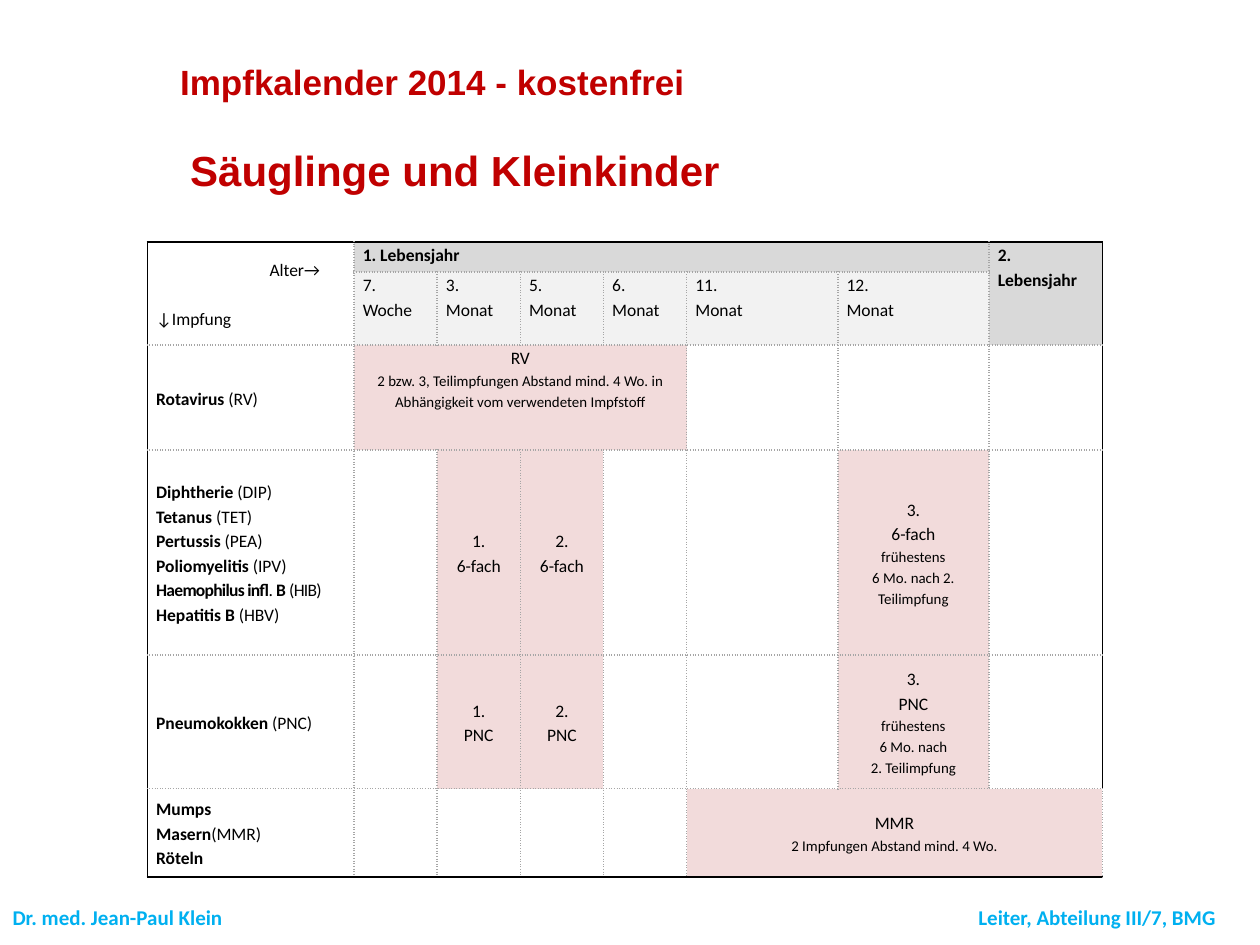
from lxml import etree
from pptx import Presentation
from pptx import util as u
from pptx.dml.color import RGBColor
from pptx.enum import text
from pptx.oxml import parse_xml
from pptx.oxml.ns import nsdecls, qn

HUES = {
    "title": "C00000", "foot": "00B0F0", "ink": "000000", "dots": "A6A6A6",
    "head": "D9D9D9", "month": "F2F2F2", "dose": "F2DBDB",
}
COLS = [1.64] + [0.66] * 4 + [1.2] * 2 + [0.9]
ROWS = [0.24, 0.58, 0.83, 1.63, 1.06, 0.7]
MONTHS = ["7. Woche", "3. Monat", "5. Monat", "6. Monat", "11. Monat", "12. Monat"]
SHOTS = [
    ["Rotavirus| (RV)"],
    ["Diphtherie| (DIP)", "Tetanus| (TET)", "Pertussis| (PEA)",
     "Poliomyelitis| (IPV)", "Haemophilus infl|. |B |(HIB)", "Hepatitis B| (HBV)"],
    ["Pneumokokken| (PNC)"],
    ["Mumps", "Masern|(MMR)", "Röteln"],
]
LEFT, MID = text.PP_ALIGN.LEFT, text.PP_ALIGN.CENTER
TOP, HALF = text.MSO_ANCHOR.TOP, text.MSO_ANCHOR.MIDDLE


def style(run, size, bold, hue="ink", face="Calibri"):
    run.font.name = face
    run.font.size = u.Pt(size)
    run.font.bold = bold
    run.font.color.rgb = RGBColor.from_string(HUES[hue])


def label(slide, words, box, size, hue, face, align=LEFT):
    shape = slide.shapes.add_textbox(*[u.Inches(n) for n in box])
    frame = shape.text_frame
    frame.word_wrap = True
    frame.vertical_anchor = HALF
    frame.margin_left = frame.margin_right = 0
    frame.text = words
    para = frame.paragraphs[0]
    para.alignment = align
    style(para.runs[0], size, True, hue, face)


def write(cell, lines, small=(), align=LEFT, anchor=HALF, bold=False):
    cell.vertical_anchor = anchor
    frame = cell.text_frame
    for at, line in enumerate([*lines, *small]):
        para = frame.paragraphs[0] if at == 0 else frame.add_paragraph()
        para.alignment = align
        para.line_spacing = 1.15
        size = 10 if at < len(lines) else 8.5
        for turn, part in enumerate(line.split("|")):
            run = para.add_run()
            run.text = part
            style(run, size, bold and turn % 2 == 0)
            if line.startswith("Haemophilus"):
                run.font._element.set("spc", "-40")


def edge(cell, sides):
    props = cell._tc.get_or_add_tcPr()
    for at, (side, outer) in enumerate(sides.items()):
        hue, dash = ("ink", "solid") if outer else ("dots", "sysDot")
        props.insert(at, parse_xml(
            f'<a:ln{side} {nsdecls("a")} w="12700"><a:solidFill>'
            f'<a:srgbClr val="{HUES[hue]}"/></a:solidFill>'
            f'<a:prstDash val="{dash}"/></a:ln{side}>'))


def paint(cell, hue):
    cell.fill.solid()
    cell.fill.fore_color.rgb = RGBColor.from_string(HUES[hue])


def frame_grid(grid):
    for r, tall in enumerate(ROWS):
        grid.rows[r].height = u.Inches(tall)
        for c, wide in enumerate(COLS):
            grid.columns[c].width = u.Inches(wide)
            cell = grid.cell(r, c)
            cell.margin_left = cell.margin_right = u.Inches(0.07)
            cell.margin_top = cell.margin_bottom = 0
            cell.fill.background()
            edge(cell, {"L": c == 0, "R": c == len(COLS) - 1,
                        "T": r == 0, "B": r == len(ROWS) - 1})


def shrink(grid):
    for cell in grid.iter_cells():
        para = cell.text_frame.paragraphs[0]
        if not para.runs:
            etree.SubElement(para._p, qn("a:endParaRPr")).set("sz", "1000")


def join(grid, first, last):
    cell = grid.cell(*first)
    cell.merge(grid.cell(*last))
    return cell


def heads(grid):
    cell = join(grid, (0, 0), (1, 0))
    write(cell, ["Alter→", "↓Impfung"])
    age, shot = cell.text_frame.paragraphs
    age._p.get_or_add_pPr().set("marL", str(u.Inches(0.9)))
    shot.space_before = u.Pt(14)
    year = join(grid, (0, 1), (0, 6))
    later = join(grid, (0, 7), (1, 7))
    for cell, lines in ((year, ["1. Lebensjahr"]), (later, ["2.", "Lebensjahr"])):
        write(cell, lines, anchor=TOP, bold=True)
        paint(cell, "head")
    for c, month in enumerate(MONTHS, 1):
        write(grid.cell(1, c), month.split(), anchor=TOP)
        paint(grid.cell(1, c), "month")


def doses(grid):
    for r, names in enumerate(SHOTS, 2):
        write(grid.cell(r, 0), names, bold=True)
    rota = join(grid, (2, 1), (2, 4))
    mumps = join(grid, (5, 5), (5, 7))
    plan = [
        (rota, ["RV"], ["2 bzw. 3, Teilimpfungen Abstand mind. 4 Wo. in "
                        "Abhängigkeit vom verwendeten Impfstoff"], TOP),
        (mumps, ["MMR"], ["2 Impfungen Abstand mind. 4 Wo."], HALF),
    ]
    ends = [["6 Mo. nach 2. Teilimpfung"], ["6 Mo. nach", "2. Teilimpfung"]]
    for r, kind, end in zip((3, 4), ("6-fach", "PNC"), ends):
        for c, turn in ((2, "1."), (3, "2."), (6, "3.")):
            small = ["frühestens", *end] if c == 6 else []
            plan.append((grid.cell(r, c), [turn, kind], small, HALF))
    for cell, lines, small, anchor in plan:
        write(cell, lines, small, MID, anchor)
        paint(cell, "dose")


def main():
    deck = Presentation()
    deck.slide_width, deck.slide_height = u.Inches(10), u.Inches(7.5)
    slide = deck.slides.add_slide(deck.slide_layouts[6])
    label(slide, "Impfkalender 2014 - kostenfrei", (1.43, 0.42, 5, 0.45), 20, "title", "Arial")
    label(slide, "Säuglinge und Kleinkinder", (1.51, 1.1, 5, 0.5), 24, "title", "Arial")
    label(slide, "Dr. med. Jean-Paul Klein", (0.1, 7.1, 4, 0.36), 12, "foot", "Calibri")
    label(slide, "Leiter, Abteilung III/7, BMG", (5.65, 7.1, 4, 0.36), 12, "foot",
          "Calibri", text.PP_ALIGN.RIGHT)
    box = [u.Inches(n) for n in (1.17, 1.92, sum(COLS), sum(ROWS))]
    grid = slide.shapes.add_table(len(ROWS), len(COLS), *box).table
    grid.first_row = grid.horz_banding = False
    frame_grid(grid)
    heads(grid)
    doses(grid)
    shrink(grid)
    deck.save("out.pptx")


if __name__ == "__main__":
    main()
